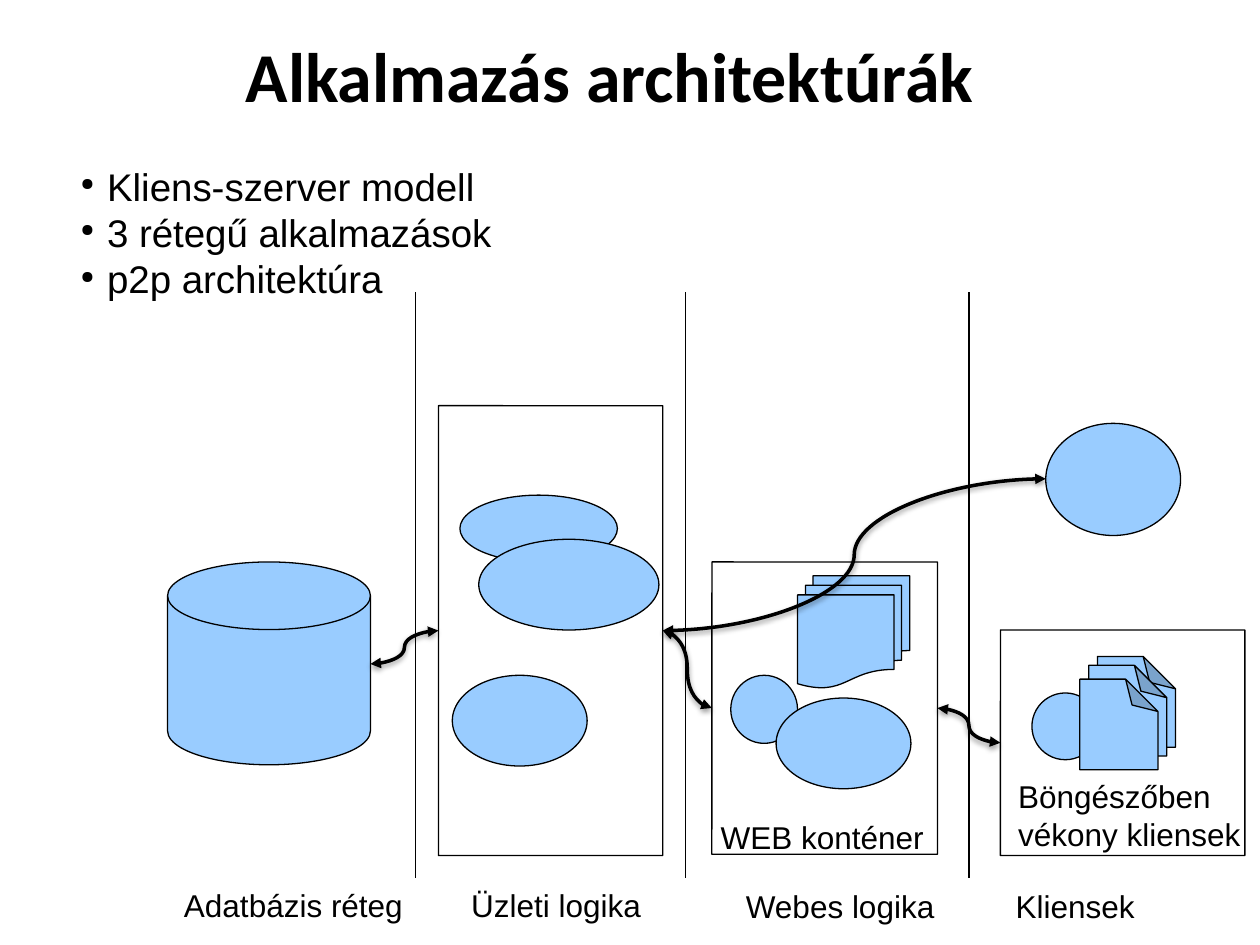
from dataclasses import dataclass

from lxml.etree import SubElement
from pptx import Presentation
from pptx.dml.color import RGBColor
from pptx.enum.shapes import MSO_CONNECTOR as CXN, MSO_SHAPE as SHP
from pptx.enum.text import MSO_ANCHOR, MSO_AUTO_SIZE, PP_ALIGN
from pptx.oxml.ns import qn
from pptx.util import Inches, Pt


@dataclass(frozen=True)
class Theme:
    """Colours, fonts and sizes."""
    ink: RGBColor = RGBColor(0, 0, 0)
    paper: RGBColor = RGBColor(255, 255, 255)
    accent: RGBColor = RGBColor(0x99, 0xCC, 0xFF)
    head_font: str = "Calibri"
    body_font: str = "Arial"
    title: float = 40
    bullet: float = 22
    label: float = 18
    thin: float = 0.75
    thick: float = 2


class Deck:
    """Draws styled elements on the current slide."""

    def __init__(self, prs, theme):
        self.prs, self.t = prs, theme
        self.s = None

    def new_slide(self):
        """Adds a title-only slide."""
        self.s = self.prs.slides.add_slide(self.prs.slide_layouts[5])

    def _write(self, sp, lines, size, font, top, bold=False, wrap=False, bullets=False):
        """Fills a text frame with one paragraph per line."""
        tf = sp.text_frame
        frame = dict(word_wrap=wrap, auto_size=MSO_AUTO_SIZE.NONE,
                     vertical_anchor=MSO_ANCHOR.TOP,
                     margin_left=Inches(0.09), margin_right=Inches(0.09),
                     margin_top=Inches(top), margin_bottom=Inches(0.04))
        for name, value in frame.items():
            setattr(tf, name, value)
        for i, line in enumerate(lines):
            p = tf.add_paragraph() if i else tf.paragraphs[0]
            p.alignment = PP_ALIGN.LEFT
            if bullets:
                self._bullet(p)
            r = p.add_run()
            r.text = line
            for name, value in dict(size=Pt(size), name=font, bold=bold).items():
                setattr(r.font, name, value)
            r.font.color.rgb = self.t.ink

    def _bullet(self, p):
        """Gives a paragraph a small round bullet."""
        p.level = 1
        pPr = p._p.get_or_add_pPr()
        pPr.set("marL", str(Inches(0.43)))
        pPr.set("indent", str(Inches(-0.21)))
        SubElement(pPr, qn("a:buSzPct"), val="45000")
        SubElement(pPr, qn("a:buChar"), char="●")

    def title(self, text, x, y, w, h):
        """Places and fills the title placeholder."""
        sp = self.s.shapes.title
        for name, value in dict(left=x, top=y, width=w, height=h).items():
            setattr(sp, name, Inches(value))
        self._write(sp, [text], self.t.title, self.t.head_font, 0.08, bold=True)

    def bullets(self, lines, x, y, w, h):
        """Adds a bulleted list."""
        sp = self.s.shapes.add_textbox(*map(Inches, (x, y, w, h)))
        self._write(sp, lines, self.t.bullet, self.t.body_font, 0.07,
                    wrap=True, bullets=True)

    def label(self, lines, x, y, w, h=0.34):
        """Adds a caption."""
        sp = self.s.shapes.add_textbox(*map(Inches, (x, y, w, h)))
        self._write(sp, lines, self.t.label, self.t.body_font, 0.06)

    def shape(self, kind, x, y, w, h, fill=None, rotation=0, adj=None):
        """Adds an outlined preset shape."""
        sp = self.s.shapes.add_shape(kind, *map(Inches, (x, y, w, h)))
        sp.shadow.inherit = False
        sp.rotation = rotation
        sp.fill.solid()
        sp.fill.fore_color.rgb = fill or self.t.accent
        sp.line.color.rgb = self.t.ink
        sp.line.width = Pt(self.t.thin)
        if adj is not None:
            guides = sp._element.spPr.find(qn("a:prstGeom")).get_or_add_avLst()
            guides.clear()
            SubElement(guides, qn("a:gd"), name="adj", fmla=f"val {round(adj * 100000)}")
        return sp

    def container(self, x, y, w, h):
        """Adds a white tier box."""
        return self.shape(SHP.ROUNDED_RECTANGLE, x, y, w, h, self.t.paper, adj=0.001)

    def _connector(self, kind, start, end, width):
        """Adds a black connector."""
        c = self.s.shapes.add_connector(kind, *map(Inches, (*start, *end)))
        c.line.color.rgb = self.t.ink
        c.line.width = Pt(width)
        return c

    def divider(self, x, top, bottom):
        """Adds a vertical rule between tiers."""
        c = self._connector(CXN.STRAIGHT, (x, top), (x, bottom), self.t.thin)
        SubElement(c._element.spPr, qn("a:effectLst"))

    def link(self, start, end, begin=None, finish=None):
        """Adds a two-headed curve, joined to the given boxes."""
        c = self._connector(CXN.CURVE, start, end, self.t.thick)
        for tag in ("a:headEnd", "a:tailEnd"):
            SubElement(c.line._get_or_add_ln(), qn(tag), type="triangle")
        if begin:
            c.begin_connect(*begin)
        if finish:
            c.end_connect(*finish)


def build(d):
    """Draws the architecture slide."""
    left, right = 1, 3
    d.new_slide()
    d.title("Alkalmazás architektúrák", 1.86, 0.18, 6.35, 0.71)
    d.bullets(["Kliens-szerver modell", "3 rétegű alkalmazások", "p2p architektúra"],
              0.33, 1.22, 5.39, 1.1)

    logic = d.container(3.48, 3.22, 1.78, 3.57)
    d.shape(SHP.FLOWCHART_MAGNETIC_DISK, 1.33, 4.46, 1.61, 1.61)
    for x in (3.3, 5.44, 7.69):
        d.divider(x, 2.32, 6.97)
    for text, x, y, w in (("Adatbázis réteg", 1.37, 6.97, 1.75),
                          ("Üzleti logika", 3.65, 6.97, 1.4),
                          ("Webes logika", 5.83, 6.98, 1.53),
                          ("Kliensek", 7.97, 6.98, 1.03)):
        d.label([text], x, y, w)
    for box in ((3.65, 3.93, 1.25, 0.53), (3.8, 4.28, 1.43, 0.72),
                (3.59, 5.36, 1.07, 0.72)):
        d.shape(SHP.OVAL, *box)

    web = d.container(5.65, 4.46, 1.79, 2.32)
    for box in ((5.8, 5.36, 0.53, 0.54), (6.16, 5.54, 1.07, 0.72)):
        d.shape(SHP.OVAL, *box)
    d.label(["WEB konténer"], 5.63, 6.43, 1.64)
    d.shape(SHP.FLOWCHART_MULTIDOCUMENT, 6.33, 4.57, 0.89, 0.89)

    browser = d.container(7.94, 5, 1.94, 1.79)
    d.shape(SHP.OVAL, 8.19, 5.5, 0.53, 0.53)
    d.label(["Böngészőben", "vékony kliensek"], 7.99, 6.11, 1.68, 0.53)
    for x, y in ((8.66, 5.26), (8.59, 5.33), (8.52, 5.44)):
        d.shape(SHP.FOLDED_CORNER, x, y, 0.72, 0.62, rotation=270, adj=0.414)
    d.shape(SHP.OVAL, 8.3, 3.36, 1.07, 0.89)

    d.link((5.26, 5), (8.3, 3.8), begin=(logic, right))
    d.link((7.44, 5.62), (7.94, 5.89), (web, right), (browser, left))
    d.link((2.94, 5.27), (3.48, 5), finish=(logic, left))
    d.link((5.65, 5.62), (5.26, 5), (web, left), (logic, right))


def main():
    """Builds and saves the deck."""
    prs = Presentation()
    prs.slide_width, prs.slide_height = Inches(10), Inches(7.5)
    build(Deck(prs, Theme()))
    prs.save("out.pptx")


if __name__ == "__main__":
    main()
